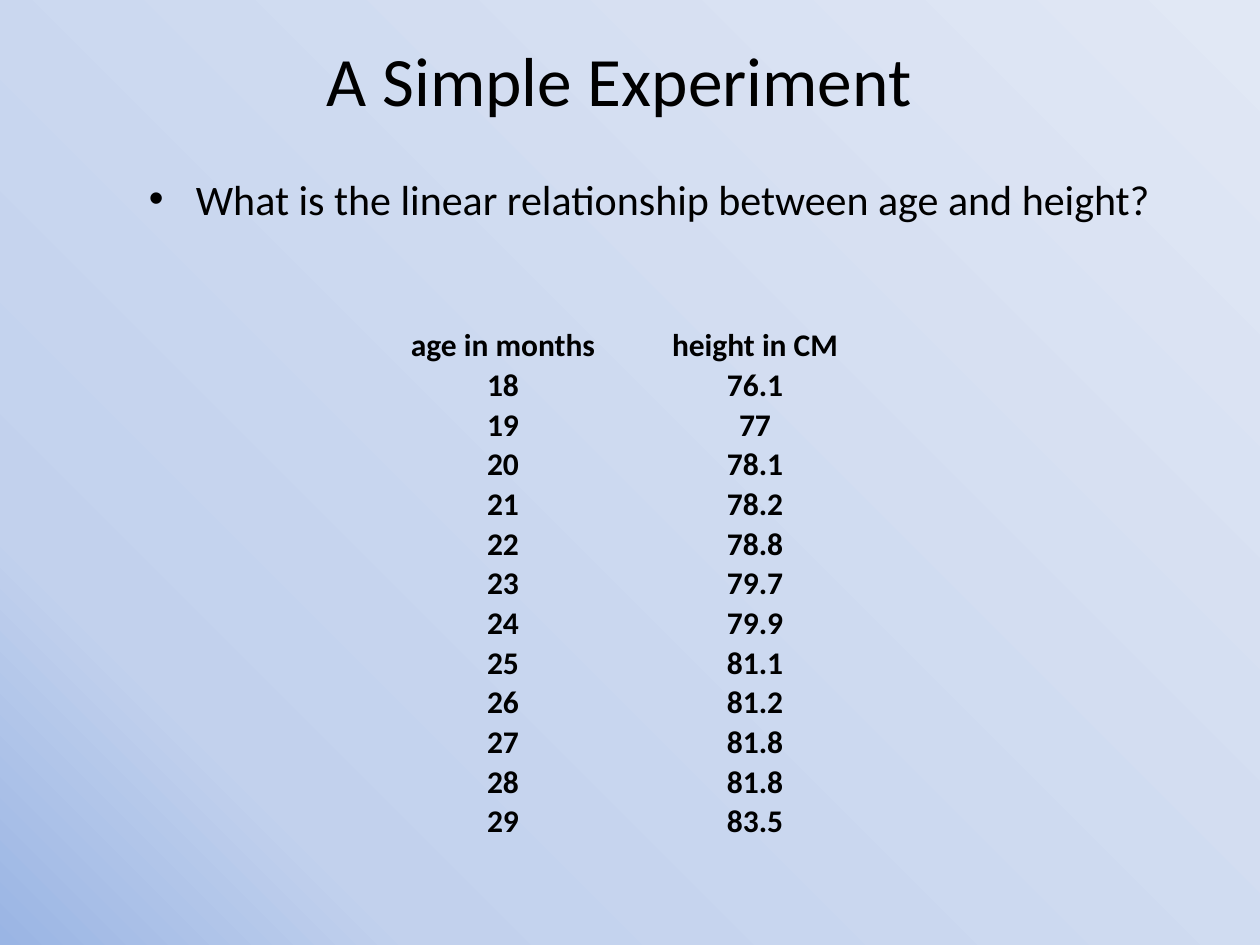
from copy import deepcopy

from lxml.etree import SubElement
from pptx import Presentation
from pptx.dml.color import RGBColor
from pptx.enum.text import MSO_ANCHOR, PP_ALIGN
from pptx.oxml.ns import qn
from pptx.util import Cm, Pt

AGES = range(18, 30)
HEIGHTS = ["76.1", "77", "78.1", "78.2", "78.8", "79.7",
           "79.9", "81.1", "81.2", "81.8", "81.8", "83.5"]
PLAIN = "{2D5ABB26-0587-4C30-8999-92F81FD0307C}"


def color(code):
    return RGBColor.from_string(code)


class Deck:
    """Hold the text style and the current slide."""

    face = "Calibri"
    ink = "000000"

    def __init__(self, width, height):
        self.file = Presentation()
        self.file.slide_width, self.file.slide_height = Cm(width), Cm(height)
        self.slide = self.file.slides.add_slide(self.file.slide_layouts[5])

    def style(self, para, size, bold=False, align=PP_ALIGN.CENTER):
        para.alignment = align
        for run in para.runs:
            run.font.name = self.face
            run.font.size = Pt(size)
            run.font.bold = bold
            run.font.color.rgb = color(self.ink)

    def backdrop(self, stops, angle):
        fill = self.slide.background.fill
        fill.gradient()
        fill.gradient_angle = angle
        marks = self.slide.element.find(".//" + qn("a:gsLst"))
        while len(marks) < len(stops):
            marks.append(deepcopy(marks[0]))
        for mark, (place, code) in zip(fill.gradient_stops, stops):
            mark.position = place
            mark.color.rgb = color(code)

    def title(self, text, left, top, width, height, size):
        box = self.slide.shapes.title
        box.left, box.top = Cm(left), Cm(top)
        box.width, box.height = Cm(width), Cm(height)
        frame = box.text_frame
        frame.text = text
        frame.vertical_anchor = MSO_ANCHOR.MIDDLE
        self.style(frame.paragraphs[0], size)

    def bullet(self, text, left, top, width, height, size, inset):
        box = self.slide.shapes.add_textbox(
            Cm(left), Cm(top), Cm(width), Cm(height))
        frame = box.text_frame
        frame.word_wrap = True
        frame.margin_top = Cm(inset)
        frame.text = text
        para = frame.paragraphs[0]
        self.style(para, size, align=PP_ALIGN.LEFT)
        props = para._p.get_or_add_pPr()
        props.set("marL", str(Cm(0.95)))
        props.set("indent", str(-Cm(0.95)))
        SubElement(props, qn("a:buFont")).set("typeface", "Arial")
        SubElement(props, qn("a:buChar")).set("char", "•")

    def table(self, rows, left, top, widths, pitch, size):
        frame = self.slide.shapes.add_table(
            len(rows), len(widths), Cm(left), Cm(top),
            Cm(sum(widths)), Cm(pitch * len(rows)))
        grid = frame.table
        grid.horz_banding = False
        grid._tbl.find(".//" + qn("a:tableStyleId")).text = PLAIN
        for column, width in zip(grid.columns, widths):
            column.width = Cm(width)
        for line, row in zip(grid.rows, rows):
            line.height = Cm(pitch)
            for cell, value in zip(line.cells, row):
                self.cell(cell, str(value), size)

    def cell(self, cell, text, size):
        cell.fill.background()
        cell.vertical_anchor = MSO_ANCHOR.BOTTOM
        cell.margin_left = cell.margin_right = cell.margin_top = Cm(0.02)
        cell.margin_bottom = 0
        cell.text_frame.text = text
        self.style(cell.text_frame.paragraphs[0], size, bold=True)


def main():
    deck = Deck(25.4, 19.05)
    deck.backdrop([(0, "9AB5E4"), (0.19, "C2D1ED"), (1, "E1E8F5")], 45)
    deck.title("A Simple Experiment", 1.9, 0.85, 21.17, 1.48, 39.6)
    deck.bullet("What is the linear relationship between age and height?",
                2.75, 2.12, 22.65, 14.4, 24, 1.37)
    rows = [("age in months", "height in CM"), *zip(AGES, HEIGHTS)]
    deck.table(rows, 7.83, 6.56, (4.62, 5.54), 0.8, 18)
    deck.file.save("out.pptx")


if __name__ == "__main__":
    main()
